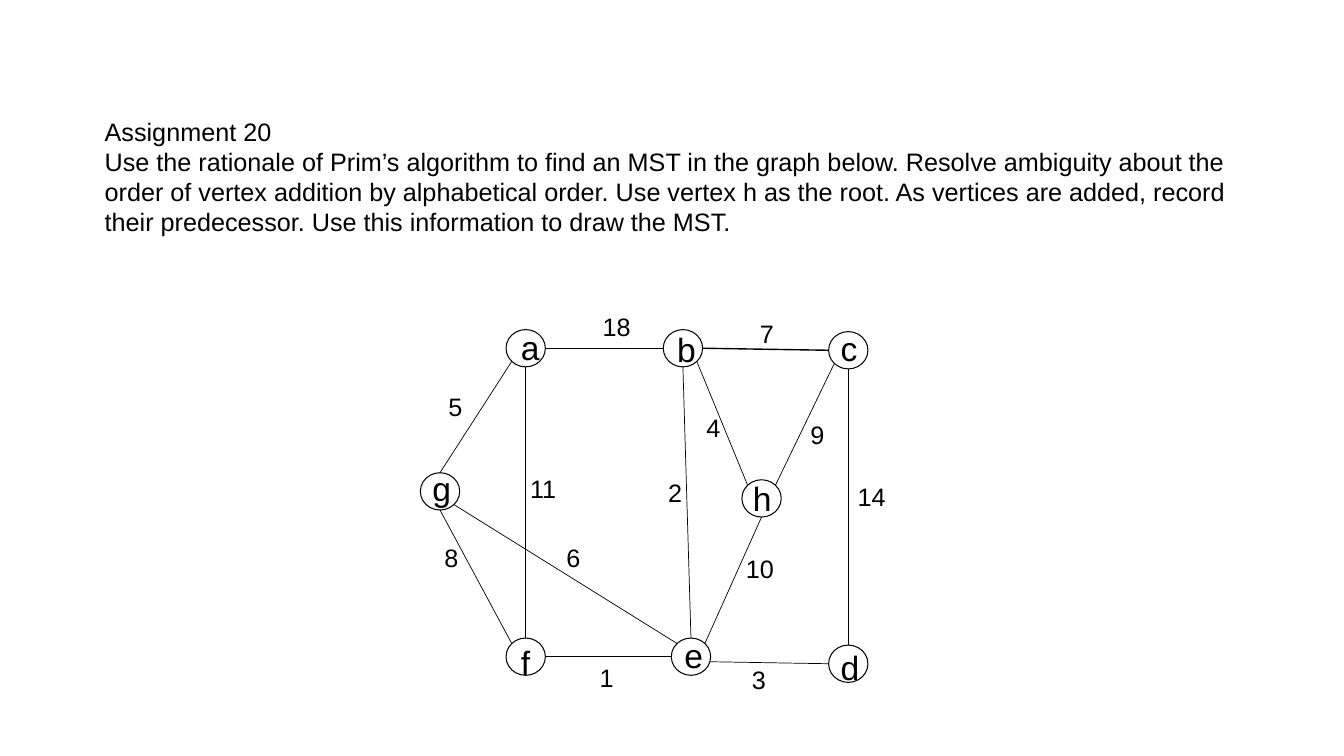
from dataclasses import dataclass
from enum import Enum
from math import cos, radians, sin

from lxml.etree import SubElement
from pptx import Presentation
from pptx.dml.color import RGBColor
from pptx.enum.shapes import MSO_CONNECTOR, MSO_SHAPE
from pptx.enum.text import MSO_AUTO_SIZE
from pptx.oxml.ns import qn
from pptx.shapes.shapetree import GroupShapes
from pptx.util import Inches, Pt

BLACK = RGBColor(0x00, 0x00, 0x00)
FONT = "Arial"

# Grid of square cells, ten to the inch
CELL = Inches(0.1)
SLIDE_COLS, SLIDE_ROWS = 133.33, 75
VERTEX_COLS, VERTEX_ROWS = 3.9, 3.7
LETTER_COLS, LETTER_ROWS = 5, 5
WEIGHT_COLS, WEIGHT_ROWS = 5.1, 4


class Side(Enum):
    """Where an edge meets a vertex, in degrees clockwise from the right."""
    RIGHT = 0
    LOWER_RIGHT = 45
    BOTTOM = 90
    LOWER_LEFT = 135
    LEFT = 180
    UPPER_LEFT = 225
    TOP = 270
    UPPER_RIGHT = 315


@dataclass(frozen=True)
class Vertex:
    col: float
    row: float
    letter_col: float
    letter_row: float

    def anchor(self, side: Side) -> tuple[float, float]:
        angle = radians(side.value)
        return (self.col + VERTEX_COLS / 2 * (1 + cos(angle)),
                self.row + VERTEX_ROWS / 2 * (1 + sin(angle)))


@dataclass(frozen=True)
class Edge:
    start: str
    start_side: Side
    end: str
    end_side: Side
    weight: int
    weight_col: float
    weight_row: float
    thickness: float = 0.5
    start_drop: float = 0


VERTICES = {
    "a": Vertex(50.2, 32.7, 50.7, 31.9),
    "b": Vertex(65.8, 32.7, 66.2, 32.1),
    "c": Vertex(82.2, 32.9, 82.4, 32.0),
    "d": Vertex(82.2, 64.0, 82.4, 63.7),
    "e": Vertex(66.6, 63.3, 66.9, 62.5),
    "f": Vertex(50.2, 63.3, 50.7, 63.2),
    "g": Vertex(41.7, 46.9, 41.9, 45.9),
    "h": Vertex(73.6, 47.6, 73.7, 46.9),
}

EDGES = [
    Edge("b", Side.RIGHT, "c", Side.LEFT, 7, 74.4, 31.1, thickness=1),
    Edge("c", Side.BOTTOM, "d", Side.TOP, 14, 84.1, 47.3),
    Edge("a", Side.LOWER_LEFT, "g", Side.TOP, 5, 43.5, 38.3),
    Edge("g", Side.BOTTOM, "f", Side.UPPER_LEFT, 8, 43.1, 53.3),
    Edge("g", Side.LOWER_RIGHT, "e", Side.UPPER_LEFT, 6, 55.2, 53.3),
    Edge("f", Side.TOP, "a", Side.BOTTOM, 11, 51.6, 46.5),
    Edge("a", Side.RIGHT, "b", Side.LEFT, 18, 58.8, 30.4),
    Edge("h", Side.BOTTOM, "e", Side.UPPER_RIGHT, 10, 73.0, 54.4),
    Edge("c", Side.LOWER_LEFT, "h", Side.UPPER_RIGHT, 9, 79.4, 41.1),
    Edge("b", Side.BOTTOM, "e", Side.TOP, 2, 65.3, 46.9),
    Edge("b", Side.LOWER_RIGHT, "h", Side.UPPER_LEFT, 4, 69.1, 40.4),
    Edge("e", Side.RIGHT, "d", Side.LEFT, 3, 73.6, 65.4, start_drop=0.5),
    Edge("f", Side.RIGHT, "e", Side.LEFT, 1, 58.5, 65.2),
]

ASSIGNMENT = (
    "Assignment 20\n"
    "Use the rationale of Prim’s algorithm to find an MST in the graph below. "
    "Resolve ambiguity about the order of vertex addition by alphabetical order. "
    "Use vertex h as the root. As vertices are added, record their predecessor. "
    "Use this information to draw the MST."
)


def cells(*counts: float) -> list[int]:
    return [round(count * CELL) for count in counts]


def write(shapes: GroupShapes, text: str, size: float, col: float, row: float,
          cols: float, rows: float) -> None:
    frame = shapes.add_textbox(*cells(col, row, cols, rows)).text_frame
    frame.word_wrap = True
    frame.auto_size = MSO_AUTO_SIZE.SHAPE_TO_FIT_TEXT
    frame.text = text
    for paragraph in frame.paragraphs:
        for run in paragraph.runs:
            run.font.name = FONT
            run.font.size = Pt(size)
            run.font.color.rgb = BLACK


def draw_circle(shapes: GroupShapes, vertex: Vertex) -> None:
    circle = shapes.add_shape(
        MSO_SHAPE.OVAL, *cells(vertex.col, vertex.row, VERTEX_COLS, VERTEX_ROWS))
    circle.shadow.inherit = False
    circle.fill.background()
    circle.line.color.rgb = BLACK
    circle.line.width = Pt(0.75)


def draw_edge(shapes: GroupShapes, edge: Edge) -> None:
    start_col, start_row = VERTICES[edge.start].anchor(edge.start_side)
    end_col, end_row = VERTICES[edge.end].anchor(edge.end_side)
    link = shapes.add_connector(
        MSO_CONNECTOR.STRAIGHT,
        *cells(start_col, start_row + edge.start_drop, end_col, end_row))
    link.line.color.rgb = BLACK
    link.line.width = Pt(edge.thickness)
    SubElement(link._element.spPr, qn("a:effectLst"))


def main() -> None:
    presentation = Presentation()
    presentation.slide_width, presentation.slide_height = cells(SLIDE_COLS, SLIDE_ROWS)
    slide = presentation.slides.add_slide(presentation.slide_layouts[6])

    # Assignment wording
    write(slide.shapes, ASSIGNMENT, 18, 9.4, 11, 116.8, 13.1)

    # Weighted graph: circles, letters, edges, weights
    graph = slide.shapes.add_group_shape().shapes
    for vertex in VERTICES.values():
        draw_circle(graph, vertex)
    for letter, vertex in VERTICES.items():
        write(graph, letter, 24, vertex.letter_col, vertex.letter_row,
              LETTER_COLS, LETTER_ROWS)
    for edge in EDGES:
        draw_edge(graph, edge)
    for edge in EDGES:
        write(graph, str(edge.weight), 18, edge.weight_col, edge.weight_row,
              WEIGHT_COLS, WEIGHT_ROWS)

    presentation.save("out.pptx")


if __name__ == "__main__":
    main()
